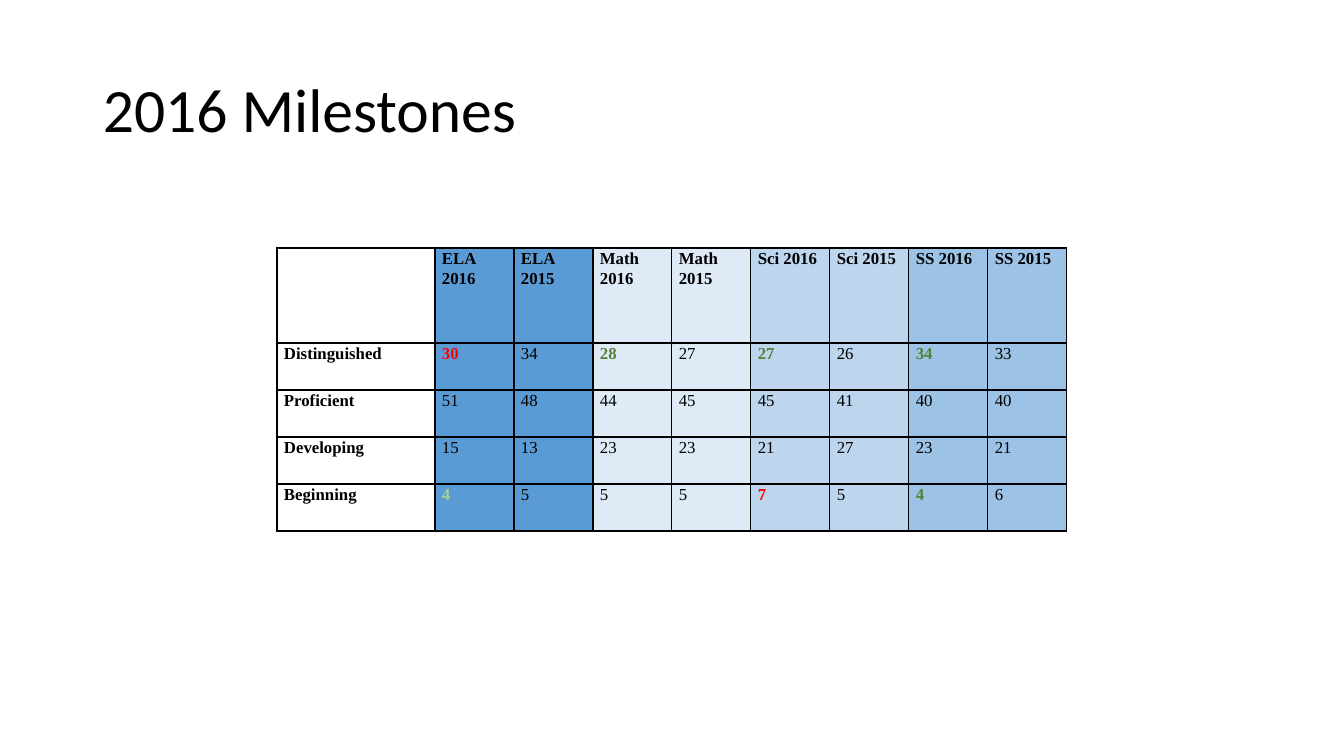
from lxml import etree
from pptx import Presentation
from pptx.dml.color import RGBColor
from pptx.enum.text import MSO_ANCHOR
from pptx.oxml.ns import qn
from pptx.util import Pt

MIDDLE = MSO_ANCHOR.MIDDLE

# Content
TITLE = "2016 Milestones"
SUBJECTS = [("ELA", "ela"), ("Math", "math"), ("Sci", "science"), ("SS", "social")]
YEARS = [2016, 2015]
LEVELS = [
    ("Distinguished", [30, 34, 28, 27, 27, 26, 34, 33]),
    ("Proficient", [51, 48, 44, 45, 45, 41, 40, 40]),
    ("Developing", [15, 13, 23, 23, 21, 27, 23, 21]),
    ("Beginning", [4, 5, 5, 5, 7, 5, 4, 6]),
]
# (level, score column) -> colour of the highlighted score
HIGHLIGHTS = {
    ("Distinguished", 0): "worse",
    ("Distinguished", 2): "better",
    ("Distinguished", 4): "better",
    ("Distinguished", 6): "better",
    ("Beginning", 0): "better_light",
    ("Beginning", 4): "worse",
    ("Beginning", 6): "better",
}
COLORS = {
    "black": "000000", "worse": "FF0000", "better": "548235", "better_light": "A9D18E",
    "ela": "5B9BD5", "math": "DEEAF6", "science": "BDD6EE", "social": "9CC2E5",
}

# Layout in px
EMU_PER_PX = 12192000 / 1344
SLIDE = (1344, 756)
TITLE_BOX = (93, 40, 1159, 146)
TABLE_LEFT, TABLE_TOP = 277, 248
LEVEL_WIDTH, SCORE_WIDTH = 158, 79
HEADER_HEIGHT, LEVEL_HEIGHT = 95, 47
CELL_INSET = 7


def px(length):
    return round(length * EMU_PER_PX)


def color(name):
    return RGBColor.from_string(COLORS[name])


def style_text(paragraph, font_name, size, color_name, spacing, bold=False):
    paragraph.line_spacing = spacing
    font = paragraph.font
    font.name, font.size, font.bold = font_name, Pt(size), bold
    font.color.rgb = color(color_name)


def add_borders(cell):
    properties = cell._tc.get_or_add_tcPr()
    for side in ("a:lnL", "a:lnR", "a:lnT", "a:lnB"):
        line = etree.SubElement(properties, qn(side), w=str(Pt(1)))
        fill = etree.SubElement(line, qn("a:solidFill"))
        etree.SubElement(fill, qn("a:srgbClr"), val=COLORS["black"])


def fill_cell(cell, text, fill_name=None, text_color="black", bold=True):
    cell.margin_left = cell.margin_right = px(CELL_INSET)
    cell.margin_top = cell.margin_bottom = 0
    add_borders(cell)
    if fill_name:
        cell.fill.solid()
        cell.fill.fore_color.rgb = color(fill_name)
    else:
        cell.fill.background()
    cell.text = text
    style_text(cell.text_frame.paragraphs[0], "Times New Roman", 12, text_color, 1.07, bold)


def main():
    deck = Presentation()
    deck.slide_width, deck.slide_height = map(px, SLIDE)
    slide = deck.slides.add_slide(deck.slide_layouts[6])

    # Title
    title = slide.shapes.add_textbox(*map(px, TITLE_BOX)).text_frame
    title.word_wrap = True
    title.vertical_anchor = MIDDLE
    title.text = TITLE
    style_text(title.paragraphs[0], "Calibri", 44, "black", 0.9)

    # Table grid
    headers = [(f"{subject} {year}", fill) for subject, fill in SUBJECTS for year in YEARS]
    widths = [LEVEL_WIDTH] + [SCORE_WIDTH] * len(headers)
    heights = [HEADER_HEIGHT] + [LEVEL_HEIGHT] * len(LEVELS)
    scores_table = slide.shapes.add_table(
        len(heights), len(widths), px(TABLE_LEFT), px(TABLE_TOP),
        px(sum(widths)), px(sum(heights))).table
    scores_table.first_row = scores_table.horz_banding = False
    for column, width in zip(scores_table.columns, widths):
        column.width = px(width)
    for row, height in zip(scores_table.rows, heights):
        row.height = px(height)

    # Header row
    fill_cell(scores_table.cell(0, 0), "")
    for col, (header, fill) in enumerate(headers):
        fill_cell(scores_table.cell(0, col + 1), header, fill)

    # Score rows
    for row, (level, scores) in enumerate(LEVELS, 1):
        fill_cell(scores_table.cell(row, 0), level)
        for col, score in enumerate(scores):
            highlight = HIGHLIGHTS.get((level, col))
            fill_cell(scores_table.cell(row, col + 1), str(score), headers[col][1],
                      highlight or "black", bool(highlight))

    deck.save("out.pptx")


if __name__ == "__main__":
    main()
